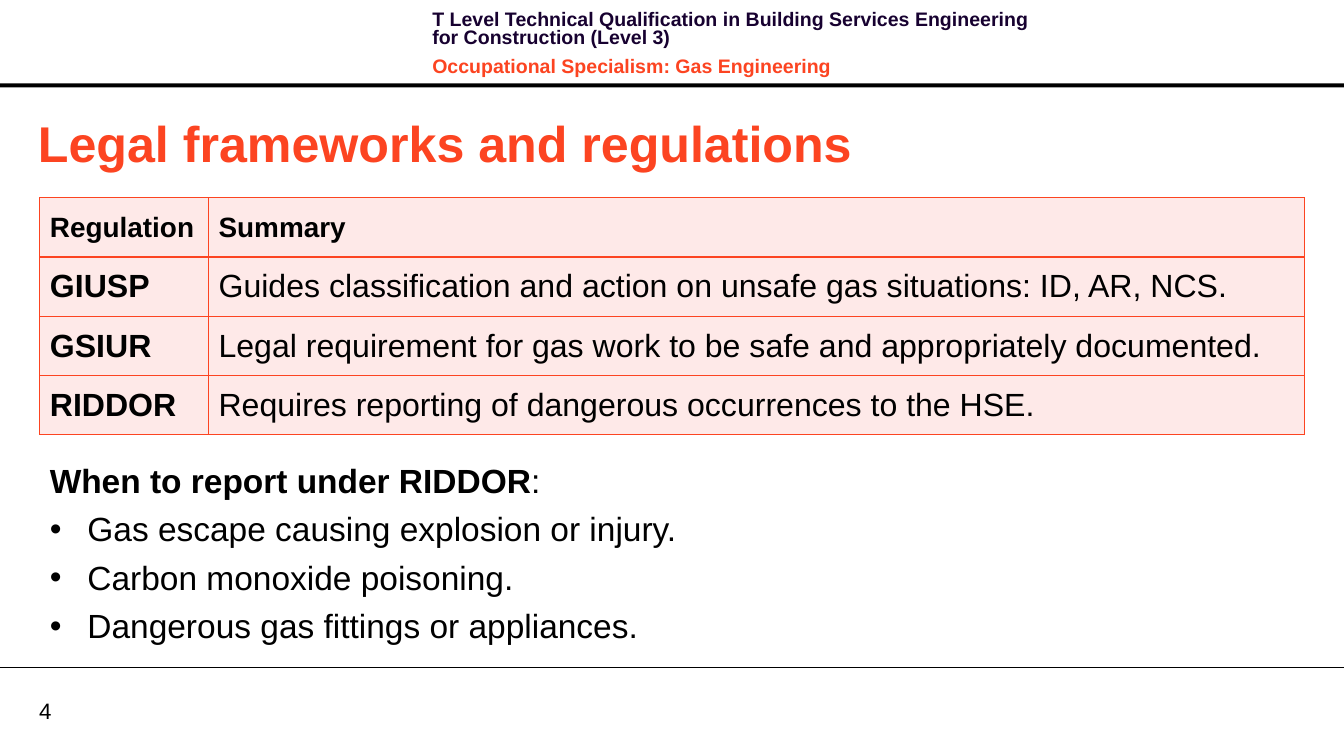
from lxml import etree
from pptx import Presentation
from pptx.dml.color import RGBColor
from pptx.enum.shapes import MSO_CONNECTOR as Connector, MSO_SHAPE as Shape
from pptx.enum.text import MSO_ANCHOR as Anchor, MSO_AUTO_SIZE as AutoSize, PP_ALIGN as Align
from pptx.oxml import parse_xml
from pptx.oxml.ns import nsdecls, qn
from pptx.util import Pt

BLACK = RGBColor(0x00, 0x00, 0x00)
ORANGE = RGBColor(0xFC, 0x44, 0x21)
NAVY = RGBColor(0x17, 0x01, 0x30)
PINK = RGBColor(0xFE, 0xE9, 0xE8)

WIDTH, HEIGHT = 964, 538.5


def set_font(font, size, color=BLACK, bold=False):
    font.color.rgb = color
    for name, value in {"name": "Arial", "size": Pt(size), "bold": bold}.items():
        setattr(font, name, value)


def add_text_frame(left, top, width, height):
    frame = slide.shapes.add_textbox(Pt(left), Pt(top), Pt(width), Pt(height)).text_frame
    frame.word_wrap = True
    return frame


prs = Presentation()
prs.slide_width, prs.slide_height = Pt(WIDTH), Pt(HEIGHT)
slide = prs.slides.add_slide(prs.slide_layouts[5])

# Header and footer
header_rule = slide.shapes.add_shape(Shape.RECTANGLE, 0, Pt(59.8), Pt(WIDTH), Pt(2.8))
header_rule.shadow.inherit = False
header_rule.fill.solid()
header_rule.fill.fore_color.rgb = BLACK
header_rule.line.fill.background()

footer_rule = slide.shapes.add_connector(Connector.STRAIGHT, 0, Pt(478.8), Pt(WIDTH), Pt(478.8))
footer_rule.line.color.rgb = BLACK
footer_rule.line.width = Pt(0.75)
etree.SubElement(footer_rule._element.spPr, qn("a:effectLst"))

page_number = add_text_frame(28, 499.7, 46, 19.4)
page_number.vertical_anchor = Anchor.MIDDLE
for side in ("left", "top", "right", "bottom"):
    setattr(page_number, f"margin_{side}", 0)
page_number.text = "4"
set_font(page_number.paragraphs[0].font, 16)

course = add_text_frame(303, 5, 458.6, 46)
course_lines = [
    ("T Level Technical Qualification in Building Services Engineering for Construction (Level 3)", NAVY, 0),
    ("Occupational Specialism: Gas Engineering", ORANGE, 4),
]
course.text = "\n".join(text for text, _, _ in course_lines)
for paragraph, (_, color, space_before) in zip(course.paragraphs, course_lines):
    paragraph.line_spacing = Pt(13.1)
    paragraph.space_before, paragraph.space_after = Pt(space_before), Pt(4)
    set_font(paragraph.font, 14, color, True)

# Title
title = slide.shapes.title
title.left, title.top, title.width, title.height = Pt(20), Pt(76.3), Pt(826), Pt(51)
title.text_frame.text = "Legal frameworks and regulations"
title.text_frame.auto_size = AutoSize.NONE
title.text_frame.vertical_anchor = Anchor.MIDDLE
title.text_frame.paragraphs[0].alignment = Align.LEFT
set_font(title.text_frame.paragraphs[0].font, 36, ORANGE, True)

# Regulations table
regulations = [
    ("Regulation", "Summary"),
    ("GIUSP", "Guides classification and action on unsafe gas situations: ID, AR, NCS."),
    ("GSIUR", "Legal requirement for gas work to be safe and appropriately documented."),
    ("RIDDOR", "Requires reporting of dangerous occurrences to the HSE."),
]
column_widths = (121, 786.2)
table = slide.shapes.add_table(
    len(regulations), 2, Pt(28.6), Pt(141.8), Pt(sum(column_widths)), Pt(170)).table
for column, width in zip(table.columns, column_widths):
    column.width = Pt(width)
for row, texts in enumerate(regulations):
    for col, text in enumerate(texts):
        cell = table.cell(row, col)
        cell.text = text
        cell.vertical_anchor = Anchor.MIDDLE
        set_font(cell.text_frame.paragraphs[0].font, 23 if row else 20, bold=row == 0 or col == 0)
        borders = [
            parse_xml(f'<a:{edge} {nsdecls("a")} w="{Pt(1)}"><a:solidFill>'
                      f'<a:srgbClr val="{ORANGE}"/></a:solidFill></a:{edge}>')
            for edge in ("lnL", "lnR", "lnT", "lnB")
        ]
        cell._tc.get_or_add_tcPr().extend(borders)
        cell.fill.solid()
        cell.fill.fore_color.rgb = PINK

# Reporting list
reporting = add_text_frame(28.6, 326.2, 563, 141.8)
heading = reporting.paragraphs[0]
heading.space_after = Pt(6)
for text, bold in (("When to report under RIDDOR", True), (":", False)):
    run = heading.add_run()
    run.text = text
    set_font(run.font, 24, bold=bold)
for occurrence in ("Gas escape causing explosion or injury.", "Carbon monoxide poisoning.",
                   "Dangerous gas fittings or appliances."):
    paragraph = reporting.add_paragraph()
    paragraph.text = occurrence
    paragraph.space_after = Pt(6)
    properties = paragraph._p.get_or_add_pPr()
    properties.set("marL", str(Pt(27)))
    properties.set("indent", str(Pt(-27)))
    etree.SubElement(properties, qn("a:buFont"), typeface="Arial")
    etree.SubElement(properties, qn("a:buChar"), char="•")
    set_font(paragraph.font, 24)

prs.save("out.pptx")
